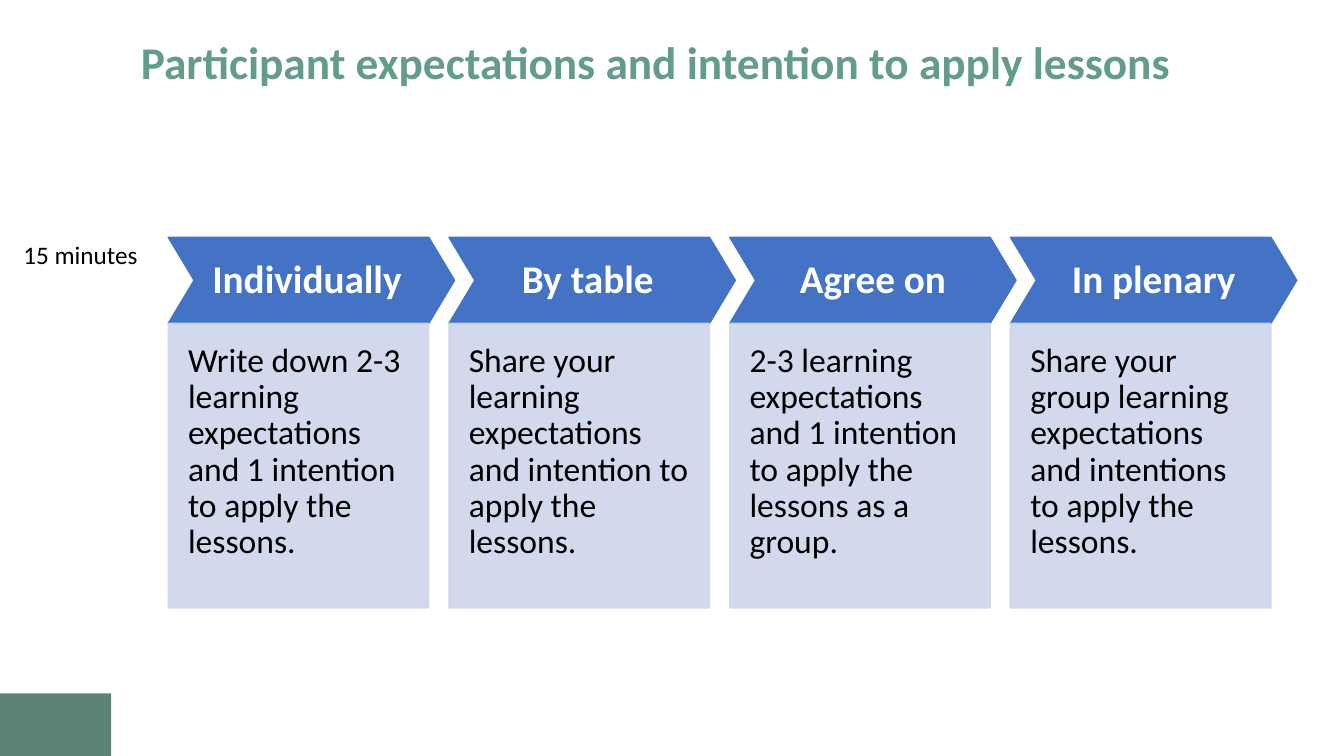
from dataclasses import dataclass

from lxml import etree
from pptx import Presentation
from pptx.dml.color import RGBColor
from pptx.enum.shapes import MSO_SHAPE
from pptx.enum.text import MSO_ANCHOR, PP_ALIGN
from pptx.oxml.ns import qn
from pptx.util import Cm, Pt

CHEVRON, RECTANGLE = MSO_SHAPE.CHEVRON, MSO_SHAPE.RECTANGLE
TOP, MIDDLE = MSO_ANCHOR.TOP, MSO_ANCHOR.MIDDLE
LEFT, CENTER = PP_ALIGN.LEFT, PP_ALIGN.CENTER


@dataclass(frozen=True)
class Theme:
    font: str = "Calibri"
    title_size: float = 32.4
    heading_size: float = 28
    body_size: float = 24
    note_size: float = 18
    title: str = "639C8C"
    corner: str = "5B8477"
    heading_fill: str = "4472C4"
    body_fill: str = "CFD5EA"
    light: str = "FFFFFF"
    dark: str = "000000"
    body_opacity: int = 90


@dataclass(frozen=True)
class Box:
    left: float
    top: float
    width: float
    height: float

    def lengths(self):
        return Cm(self.left), Cm(self.top), Cm(self.width), Cm(self.height)


THEME = Theme()
STEPS = [
    ("Individually ", "Write down 2-3 learning expectations and 1 intention to apply the lessons."),
    ("By table ", "Share your learning expectations and intention to apply the lessons."),
    ("Agree on", "2-3 learning expectations and 1 intention to apply the lessons as a group."),
    ("In plenary", "Share your group learning expectations and intentions to apply the lessons."),
]


def write(shape, text, size, color, align=LEFT, anchor=TOP, bold=False,
          spacing=0.9, insets=(0.25, 0.13, 0.25, 0.13)):
    frame = shape.text_frame
    frame.word_wrap = True
    frame.vertical_anchor = anchor
    frame.margin_left, frame.margin_top, frame.margin_right, frame.margin_bottom = map(Cm, insets)
    para = frame.paragraphs[0]
    para.text = text
    para.alignment = align
    para.line_spacing = spacing
    para.font.name = THEME.font
    para.font.size = Pt(size)
    para.font.bold = bold
    para.font.color.rgb = RGBColor.from_string(color)


def add_panel(page, kind, box, color, outlined=True, opacity=100):
    panel = page.shapes.add_shape(kind, *box.lengths())
    panel.shadow.inherit = False
    panel.fill.solid()
    panel.fill.fore_color.rgb = RGBColor.from_string(color)
    if outlined:
        panel.line.width = Pt(1)
        panel.line.color.rgb = RGBColor.from_string(color)
    else:
        panel.line.fill.background()
    if opacity < 100:
        for tint in panel.element.spPr.iter(qn("a:srgbClr")):
            etree.SubElement(tint, qn("a:alpha"), val=str(opacity * 1000))
    return panel


def add_title(page, box):
    title = page.shapes.add_textbox(*box.lengths())
    write(title, "Participant expectations and intention to apply lessons",
          THEME.title_size, THEME.title, anchor=MIDDLE, bold=True)


def add_duration(page, box):
    note = page.shapes.add_textbox(*box.lengths())
    write(note, "15 minutes", THEME.note_size, THEME.dark, align=CENTER, spacing=1)


def add_step(page, box, heading, body):
    heading_height = 2.17
    tip = 0.3 * heading_height
    chevron = add_panel(page, CHEVRON, Box(box.left, box.top, box.width, heading_height),
                        THEME.heading_fill)
    chevron.adjustments[0] = 0.3
    write(chevron, heading, THEME.heading_size, THEME.light, CENTER, MIDDLE, True,
          insets=(0.28,) * 4)
    card = add_panel(page, RECTANGLE,
                     Box(box.left, box.top + heading_height, box.width - tip,
                         box.height - heading_height),
                     THEME.body_fill, opacity=THEME.body_opacity)
    write(card, body, THEME.body_size, THEME.dark, insets=(0.5, 0.5, 0.5, 1.04))


def add_process(page, box):
    overlap = 0.14
    count = len(STEPS)
    width = (box.width + overlap * (count - 1)) / count
    for index, (heading, body) in enumerate(STEPS):
        left = box.left + index * (width - overlap)
        add_step(page, Box(left, box.top, width, box.height), heading, body)


def main():
    deck = Presentation()
    deck.slide_width, deck.slide_height = Cm(33.87), Cm(19.05)
    page = deck.slides.add_slide(deck.slide_layouts[6])
    add_panel(page, RECTANGLE, Box(0, 17.47, 2.8, 1.58), THEME.corner, outlined=False)
    add_title(page, Box(3.3, 0.74, 28.22, 1.8))
    add_process(page, Box(4.24, 5.98, 28.44, 9.34))
    add_duration(page, Box(0.15, 5.89, 3.76, 1.02))
    deck.save("out.pptx")


if __name__ == "__main__":
    main()
